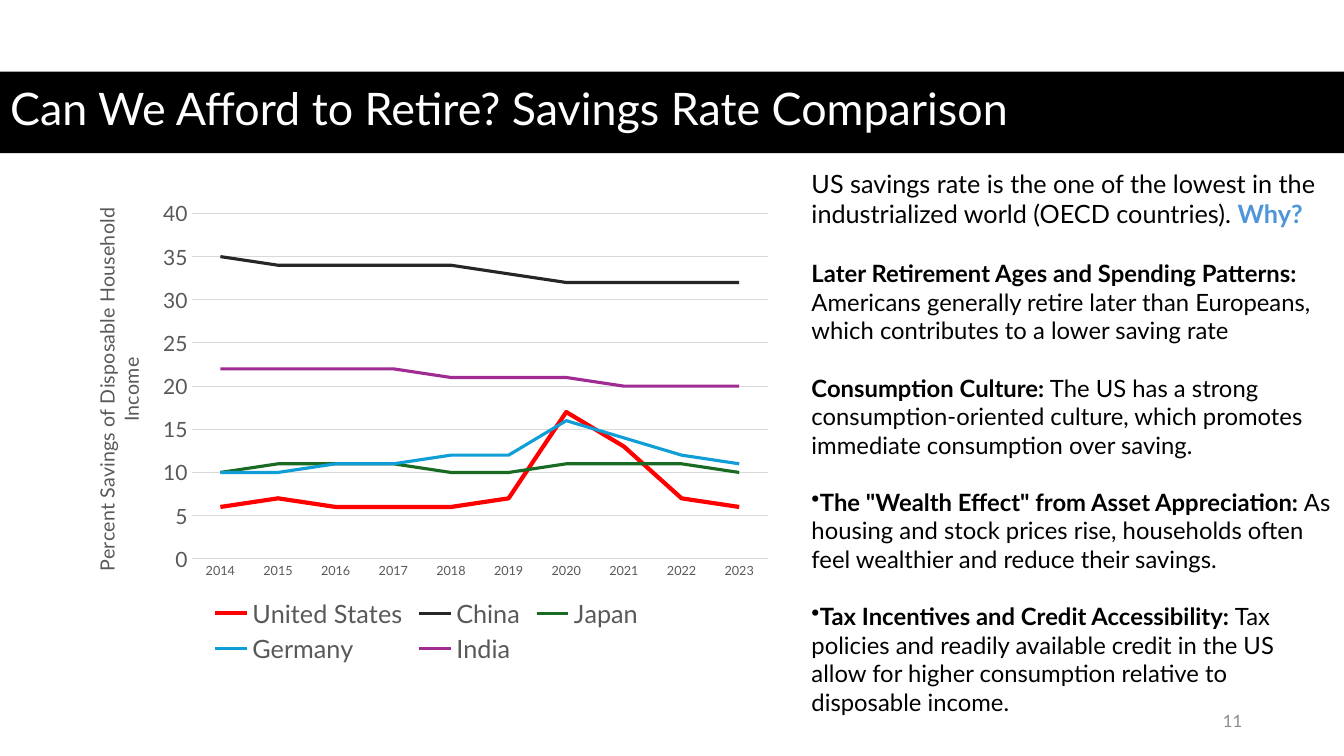
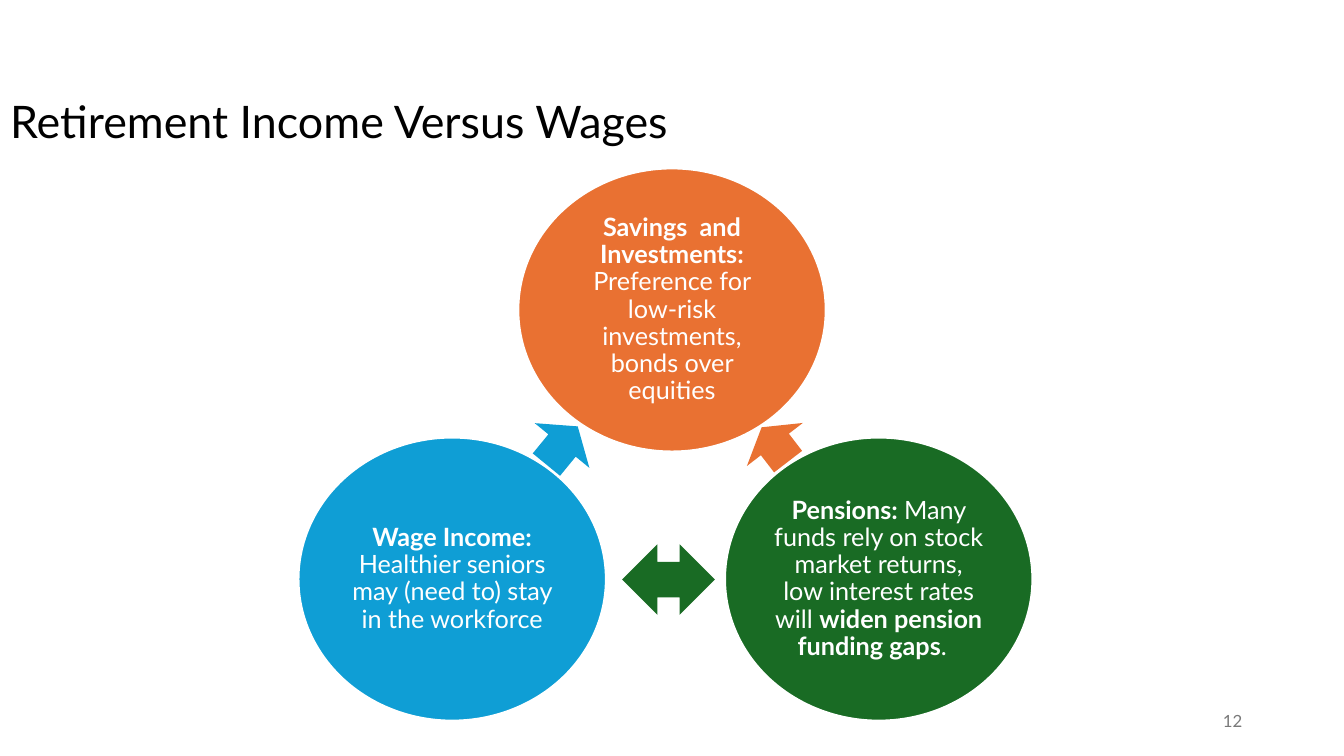
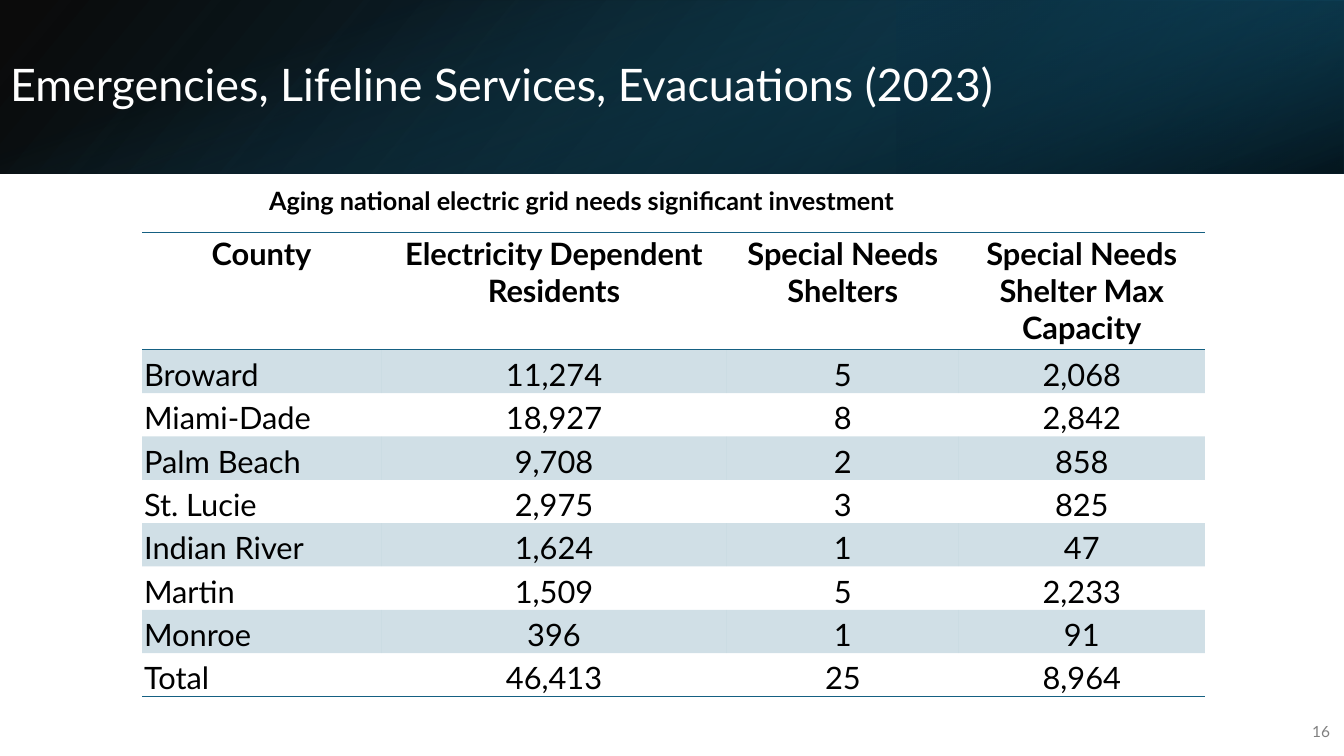
import pptx
import pptx.util
import pptx.oxml
import pptx.oxml.ns
import pptx.chart.data
import pptx.dml.color
import pptx.enum.chart
import pptx.enum.shapes
import pptx.enum.text

Inches, Pt = pptx.util.Inches, pptx.util.Pt
SHAPE = pptx.enum.shapes.MSO_SHAPE
ALIGN = pptx.enum.text.PP_ALIGN
ANCHOR = pptx.enum.text.MSO_ANCHOR
qn = pptx.oxml.ns.qn

FONT = "Lato"
BLACK, WHITE, GREY, RULE = "000000", "FFFFFF", "595959", "D9D9D9"
ORANGE, GREEN, SKY, TEAL = "E97132", "196B24", "0F9ED5", "156082"
NS = 'xmlns:%s="http://schemas.openxmlformats.org/drawingml/2006/%s"'
NS_A, NS_C = NS % ("a", "main"), NS % ("c", "chart")


def rgb(code):
    return pptx.dml.color.RGBColor.from_string(code)


def style(font, size, color, bold=False):
    font.name, font.size, font.bold = FONT, Pt(size), bold
    font.color.rgb = rgb(color)


def write(para, runs, size, color):
    """Fill a paragraph from (text, bold) or (text, bold, color) runs."""
    for text, bold, *own in runs:
        run = para.add_run()
        run.text = text
        style(run.font, size, own[0] if own else color, bold)


def add_text(slide, box, size, color, paras, gap=0):
    shape = slide.shapes.add_textbox(*map(Inches, box))
    frame = shape.text_frame
    frame.word_wrap = True
    for i, runs in enumerate(paras):
        para = frame.add_paragraph() if i else frame.paragraphs[0]
        para.space_after = Pt(gap)
        write(para, runs, size, color)
    return frame


def add_block(slide, kind, box, fill=None, turn=0):
    shape = slide.shapes.add_shape(kind, *map(Inches, box))
    shape.shadow.inherit = False
    shape.rotation = turn
    shape.line.fill.background()
    if fill:
        shape.fill.solid()
        shape.fill.fore_color.rgb = rgb(fill)
    return shape


def add_title(slide, box, text, color):
    title = slide.shapes.title
    title.left, title.top, title.width, title.height = map(Inches, box)
    frame = title.text_frame
    frame.text = text
    frame.auto_size = pptx.enum.text.MSO_AUTO_SIZE.NONE
    frame.vertical_anchor = ANCHOR.MIDDLE
    para = frame.paragraphs[0]
    para.alignment, para.line_spacing = ALIGN.LEFT, 0.9
    style(para.runs[0].font, 32, color)
    # Keep the title above its band
    title.element.getparent().append(title.element)


def add_number(slide, text, color, box=(9.42, 6.95, 3, 0.4), size=12):
    frame = add_text(slide, box, size, color, [[(text, False)]])
    frame.vertical_anchor = ANCHOR.MIDDLE
    frame.paragraphs[0].alignment = ALIGN.RIGHT


# Savings slide: line chart and reasons
YEARS = [str(year) for year in range(2014, 2024)]
RATES = [
    ("United States", "FF0000", 3, (6, 7, 6, 6, 6, 7, 17, 13, 7, 6)),
    ("China", "262626", 2.25, (35, 34, 34, 34, 34, 33, 32, 32, 32, 32)),
    ("Japan", GREEN, 2.25, (10, 11, 11, 11, 10, 10, 11, 11, 11, 10)),
    ("Germany", SKY, 2.25, (10, 10, 11, 11, 12, 12, 16, 14, 12, 11)),
    ("India", "A02B93", 2.25, (22, 22, 22, 22, 21, 21, 21, 20, 20, 20)),
]
REASONS = [
    [("Later Retirement Ages and Spending Patterns:", True),
     (" Americans generally retire later than Europeans, which contributes "
      "to a lower saving rate", False)],
    [("Consumption Culture:", True),
     (" The US has a strong consumption-oriented culture, which promotes "
      "immediate consumption over saving.", False)],
    [('The "Wealth Effect" from Asset Appreciation:', True),
     (" As housing and stock prices rise, households often feel wealthier "
      "and reduce their savings.", False)],
    [("Tax Incentives and Credit Accessibility:", True),
     (" Tax policies and readily available credit in the US allow for "
      "higher consumption relative to disposable income.", False)],
]


def layout_xml(x, y, w, h, inner=False):
    target = '<c:layoutTarget val="inner"/>' if inner else ""
    parts = "".join(f'<c:{tag} val="{val}"/>' for tag, val in (
        ("xMode", "edge"), ("yMode", "edge"),
        ("x", x), ("y", y), ("w", w), ("h", h)))
    return pptx.oxml.parse_xml(
        f"<c:layout {NS_C}><c:manualLayout>{target}{parts}"
        "</c:manualLayout></c:layout>")


def add_rates(slide, box):
    data = pptx.chart.data.CategoryChartData()
    data.categories = YEARS
    for name, _, _, vals in RATES:
        data.add_series(name, vals)
    chart = slide.shapes.add_chart(
        pptx.enum.chart.XL_CHART_TYPE.LINE, *map(Inches, box), data).chart
    style(chart.font, 10, BLACK)
    chart.has_title = False
    plot = chart.plots[0]
    plot.vary_by_categories = False
    for line, (_, color, width, _) in zip(plot.series, RATES):
        line.smooth = False
        line.format.line.color.rgb = rgb(color)
        line.format.line.width = Pt(width)
    # Axes
    none = pptx.enum.chart.XL_TICK_MARK.NONE
    cat, val = chart.category_axis, chart.value_axis
    for axis, size in ((cat, 9), (val, 15)):
        axis.major_tick_mark = axis.minor_tick_mark = none
        style(axis.tick_labels.font, size, GREY)
    val.minimum_scale, val.maximum_scale, val.major_unit = 0, 40, 5
    val.format.line.fill.background()
    for line in (cat.format.line, val.major_gridlines.format.line):
        line.color.rgb = rgb(RULE)
        line.width = Pt(0.75)
    para = val.axis_title.text_frame.paragraphs[0]
    write(para, [("Percent Savings of Disposable Household Income", False)],
          14, GREY)
    # Legend and plot places
    chart.has_legend = True
    legend = chart.legend
    legend.position = pptx.enum.chart.XL_LEGEND_POSITION.BOTTOM
    legend.include_in_layout = False
    style(legend.font, 18, GREY)
    pos = legend._element.find(qn("c:legendPos"))
    pos.addnext(layout_xml(0.2, 0.85, 0.62, 0.15))
    area = chart._chartSpace.chart.plotArea
    for old in area.findall(qn("c:layout")):
        area.remove(old)
    area.insert(0, layout_xml(0.17, 0.05, 0.81, 0.72, True))


def add_reasons(slide, box):
    lead = [("US savings rate is the one of the lowest in the industrialized "
             "world (OECD countries). ", False), ("Why?", True, "4E95D9")]
    frame = add_text(slide, box, 17, BLACK, [lead] + REASONS, 20.4)
    first, *rest = frame.paragraphs
    first.space_after = Pt(21.6)
    for run in first.runs:
        run.font.size = Pt(18)
    for para in rest[2:]:
        para._p.get_or_add_pPr().append(
            pptx.oxml.parse_xml(f'<a:buChar {NS_A} char="•"/>'))


def savings_slide(slide):
    add_block(slide, SHAPE.RECTANGLE, (0, 0.71, 13.33, 0.81), BLACK)
    add_title(slide, (0, 0.7, 12.87, 0.81),
              "Can We Afford to Retire? Savings Rate Comparison", WHITE)
    add_number(slide, "11", "8C8C8C")
    add_rates(slide, (0.7, 1.88, 7.06, 4.76))
    add_reasons(slide, (7.95, 1.62, 5.38, 6.5))


# Income slide: three linked circles
CIRCLES = [
    (2.18, 0, ORANGE,
     [("Savings  and Investments: ", True),
      ("Preference for low-risk investments, bonds over equities", False)]),
    (4.23, 2.67, GREEN,
     [("Pensions: ", True),
      ("Many funds rely on stock market returns, low interest rates will ",
       False),
      ("widen pension funding gaps", True), (".  ", False)]),
    (0, 2.67, SKY,
     [("Wage Income: ", True),
      ("Healthier seniors may (need to) stay in the workforce", False)]),
]
ARROWS = [
    (SHAPE.LEFT_ARROW, 4.51, 2.39, 0.43, 52.4, ORANGE),
    (SHAPE.LEFT_RIGHT_ARROW, 3.21, 3.73, 0.92, 180, GREEN),
    (SHAPE.RIGHT_ARROW, 2.37, 2.4, 0.49, 309.3, SKY),
]


def add_cycle(slide, left, top):
    for x, y, color, runs in CIRCLES:
        disc = add_block(slide, SHAPE.OVAL,
                         (left + x, top + y, 3.05, 2.81), color)
        disc.line.color.rgb = rgb(WHITE)
        disc.line.width = Pt(1.5)
        frame = disc.text_frame
        frame.word_wrap = True
        frame.vertical_anchor = ANCHOR.MIDDLE
        frame.margin_left = frame.margin_right = Inches(0.03)
        frame.margin_top = frame.margin_bottom = Inches(0.03)
        para = frame.paragraphs[0]
        para.alignment, para.line_spacing = ALIGN.CENTER, 0.9
        write(para, runs, 18, WHITE)
    for kind, x, y, width, turn, color in ARROWS:
        add_block(slide, kind, (left + x, top + y, width, 0.7), color, turn)


def income_slide(slide):
    add_title(slide, (0, 0.61, 12.42, 1.24),
              "Retirement Income Versus Wages", BLACK)
    add_number(slide, "12", "797979")
    add_cycle(slide, 2.96, 1.67)


# Emergency slide: shaded band and county table
HEADS = ("County", "Electricity Dependent Residents",
         "Special Needs Shelters", "Special Needs Shelter Max Capacity")
COUNTIES = [
    ("Broward", "11,274", "5", "2,068"),
    ("Miami-Dade", "18,927", "8", "2,842"),
    ("Palm Beach", "9,708", "2", "858"),
    ("St. Lucie", "2,975", "3", "825"),
    ("Indian River", "1,624", "1", "47"),
    ("Martin", "1,509", "5", "2,233"),
    ("Monroe", "396", "1", "91"),
    ("Total", "46,413", "25", "8,964"),
]
# Box, turn, flip, angle, stops of (place, color, opacity)
SHADES = [
    ((0, 0, 13.33, 1.72), 0, True, 140,
     ((0, BLACK, 96), (100, "104862", 100))),
    ((8.89, 0, 4.44, 1.72), 180, True, 320,
     ((19, "0B3041", 68), (100, TEAL, 79))),
    ((5.8, -5.8, 1.72, 13.33), 90, False, 340,
     ((23, TEAL, 0), (99, BLACK, 74))),
]


def clear_xml(color, part):
    return (f'<a:srgbClr val="{color}"><a:alpha val="{part * 1000}"/>'
            "</a:srgbClr>")


def add_shades(slide):
    for box, turn, flip, angle, stops in SHADES:
        shape = add_block(slide, SHAPE.RECTANGLE, box, turn=turn)
        props = shape.element.spPr
        if flip:
            props.find(qn("a:xfrm")).set("flipH", "1")
        marks = "".join(f'<a:gs pos="{place * 1000}">'
                        f"{clear_xml(color, part)}</a:gs>"
                        for place, color, part in stops)
        props.find(qn("a:prstGeom")).addnext(pptx.oxml.parse_xml(
            f'<a:gradFill {NS_A} rotWithShape="1"><a:gsLst>{marks}</a:gsLst>'
            f'<a:lin ang="{angle * 60000}" scaled="0"/></a:gradFill>'))


def add_edge(cell, side):
    """Draw one border; called before the cell's fill is set."""
    cell._tc.get_or_add_tcPr().append(pptx.oxml.parse_xml(
        f'<a:{side} {NS_A} w="12700"><a:solidFill><a:srgbClr val="{TEAL}"/>'
        f"</a:solidFill></a:{side}>"))


def add_counties(slide, box):
    rows = [HEADS] + COUNTIES
    table = slide.shapes.add_table(
        len(rows), len(HEADS), *map(Inches, box)).table
    table.first_row = table.horz_banding = False
    # Plain style without grid
    table._tbl.tblPr.find(qn("a:tableStyleId")).text = (
        "{2D5ABB26-0587-4C30-8999-92F81FD0307C}")
    for col, width in zip(table.columns, (2.37, 3.43, 2.3, 2.44)):
        col.width = Inches(width)
    for r, row in enumerate(rows):
        table.rows[r].height = Inches(0.43 if r else 1.16)
        for c, text in enumerate(row):
            cell = table.cell(r, c)
            cell.margin_left = cell.margin_right = Inches(0.02)
            cell.margin_top, cell.margin_bottom = Inches(0.02), 0
            cell.vertical_anchor = ANCHOR.BOTTOM if r else ANCHOR.TOP
            para = cell.text_frame.paragraphs[0]
            para.alignment = ALIGN.LEFT if r and not c else ALIGN.CENTER
            write(para, [(text, r == 0)], 22, BLACK)
            if r == 0:
                add_edge(cell, "lnT")
            if r in (0, len(rows) - 1):
                add_edge(cell, "lnB")
            if r % 2:
                cell._tc.get_or_add_tcPr().append(pptx.oxml.parse_xml(
                    f"<a:solidFill {NS_A}>{clear_xml(TEAL, 20)}"
                    "</a:solidFill>"))
            else:
                cell.fill.background()


def emergency_slide(slide):
    add_shades(slide)
    add_title(slide, (0, 0.38, 12.48, 0.96),
              "Emergencies, Lifeline Services, Evacuations (2023)", WHITE)
    add_number(slide, "16", "808080", (12.8, 7.06, 0.49, 0.4), 11)
    add_counties(slide, (1.41, 2.31, 10.54, 4.6))
    add_text(slide, (2.57, 1.79, 8.74, 0.71), 18, BLACK,
             [[("Aging national electric grid needs significant investment",
                True)]])


def main():
    deck = pptx.Presentation()
    deck.slide_width, deck.slide_height = Inches(13.33), Inches(7.5)
    for build in (savings_slide, income_slide, emergency_slide):
        build(deck.slides.add_slide(deck.slide_layouts[5]))
    deck.save("out.pptx")


if __name__ == "__main__":
    main()
